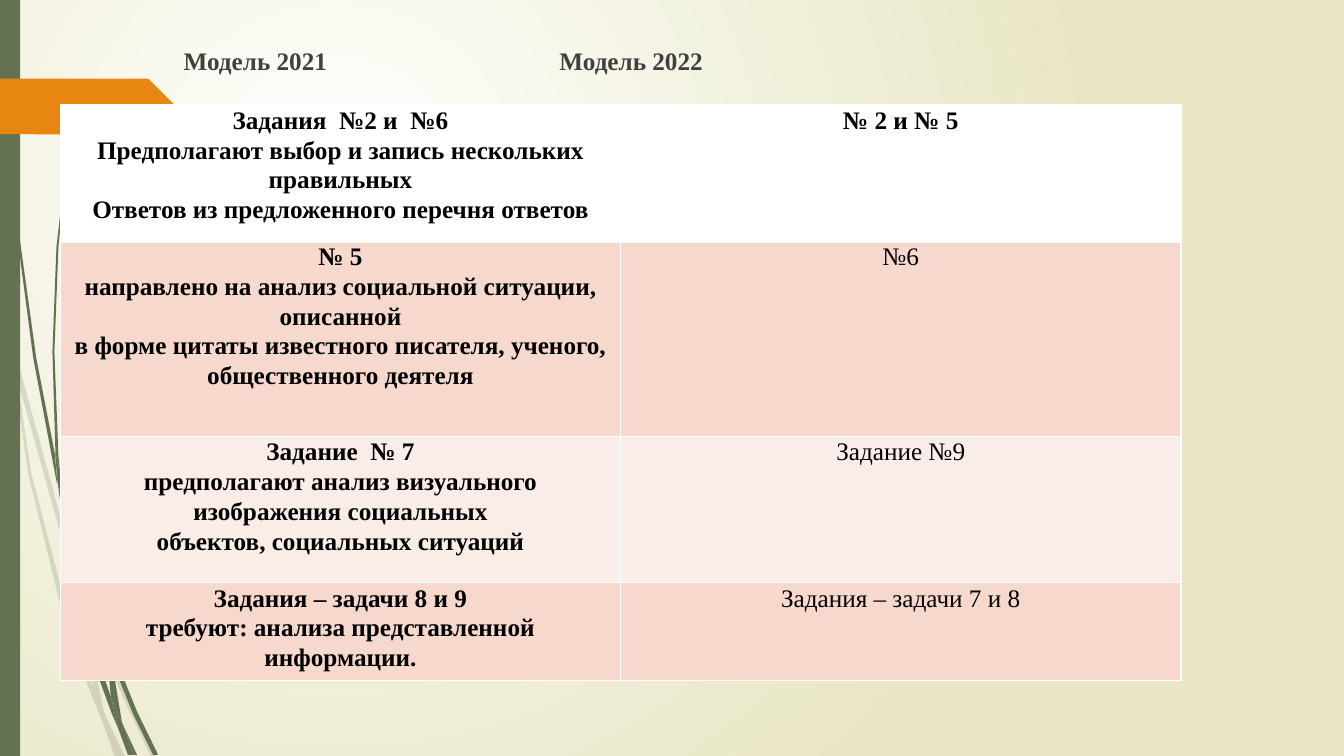
from lxml import etree
from pptx import Presentation
from pptx.dml.color import RGBColor
from pptx.enum.shapes import MSO_SHAPE as SHAPE
from pptx.enum.text import PP_ALIGN as ALIGN
from pptx.oxml.ns import qn
from pptx.util import Cm, Pt

GREEN = RGBColor(0x64, 0x72, 0x52)
ORANGE = RGBColor(0xE7, 0x87, 0x12)
WHITE = RGBColor(0xFF, 0xFF, 0xFF)
CREAM = RGBColor(0xE8, 0xE6, 0xC4)
PEACH = RGBColor(0xF6, 0xD9, 0xCC)
PALE = RGBColor(0xFA, 0xED, 0xE7)
BLACK = RGBColor(0, 0, 0)
GREY = RGBColor(0x40, 0x40, 0x40)
FONT, SIZE = "Times New Roman", Pt(18)

# Content
HEADINGS = ["Модель 2021", "Модель 2022"]
HEADING_TABS = [2.86, 12.33]
# row height, fill, right cell bold, left paragraphs, right text
ROWS = [
    (3.43, WHITE, True,
     ["Задания  №2 и  №6",
      "Предполагают выбор и запись нескольких правильных",
      "Ответов из предложенного перечня ответов"], "№ 2 и № 5"),
    (4.93, PEACH, False,
     ["№ 5",
      "направлено на анализ социальной ситуации, описанной",
      "в форме цитаты известного писателя, ученого, общественного деятеля"],
     "№6"),
    (3.68, PALE, False,
     ["Задание  № 7",
      "предполагают анализ визуального изображения социальных",
      "объектов, социальных ситуаций"], "Задание №9"),
    (2.46, PEACH, False,
     ["Задания – задачи 8 и 9",
      "требуют: анализа представленной информации."],
     "Задания – задачи 7 и 8"),
]
COL_W = 14.12

# Outlines of the grass blades, in units of 0.0254 cm
UNIT = Cm(0.0254)
PALE_BLADES = [
    [(11, 350), (9, 322), (0, 282), (0, 299), (10, 344)],
    [(58, 522), (84, 599), (85, 586), (62, 520), (14, 345), (17, 376)],
    [(92, 607), (88, 596), (88, 610), (123, 694), (150, 751), (155, 751),
     (127, 692)],
    [(119, 751), (124, 751), (105, 711)],
    [(93, 683), (70, 619), (31, 469), (17, 376), (11, 350), (28, 470),
     (65, 621), (92, 693), (101, 714), (99, 707)],
    [(84, 599), (87, 646), (93, 683), (96, 692), (105, 711), (103, 706),
     (91, 646), (88, 610), (88, 608)],
    [(88, 584), (110, 462), (160, 349), (229, 245), (268, 198), (290, 175),
     (312, 154), (312, 153), (289, 175), (268, 197), (228, 244), (158, 348),
     (107, 461), (85, 584), (85, 586), (88, 596)],
    [(101, 714), (114, 751), (119, 751)],
    [(88, 608), (88, 610), (88, 596), (85, 586), (84, 599)],
    [(96, 692), (93, 683), (99, 707), (101, 714), (119, 751), (105, 711)],
]
DARK_BLADES = [
    [(7, 110), (17, 233), (33, 355), (56, 477), (57, 481), (55, 457),
     (55, 453), (36, 355), (19, 232), (8, 109), (5, 48), (4, 0), (3, 0),
     (4, 48)],
    [(88, 592), (106, 645), (106, 631), (93, 590), (60, 472), (64, 505)],
    [(113, 649), (110, 641), (111, 656), (132, 708), (152, 749), (157, 749),
     (136, 706)],
    [(110, 691), (98, 657), (72, 556), (64, 505), (57, 477), (68, 557),
     (93, 659), (111, 708), (117, 722), (116, 717)],
    [(60, 472), (58, 453), (54, 349), (58, 245), (63, 193), (70, 141),
     (62, 193), (56, 245), (52, 349), (55, 449)],
    [(133, 749), (136, 749), (122, 719)],
    [(57, 477), (64, 505), (60, 472), (55, 449), (55, 453)],
    [(111, 633), (125, 552), (158, 476), (205, 406), (231, 374), (245, 359),
     (261, 344), (260, 344), (245, 358), (231, 373), (204, 405), (156, 474),
     (122, 551), (106, 631), (110, 641)],
    [(117, 722), (127, 749), (131, 749)],
    [(106, 645), (110, 691), (116, 706), (122, 719), (121, 716), (111, 656),
     (109, 651)],
    [(106, 645), (109, 651), (111, 656), (110, 641), (106, 631)],
    [(116, 706), (110, 691), (116, 717), (117, 722), (130, 749), (133, 749),
     (122, 719)],
]
ARROW = [(173, 108), (148, 133), (146, 134), (136, 134), (0, 133), (0, 78),
         (146, 78), (148, 79), (173, 104), (174, 106)]


def paint(shape, color, opacity=100):
    shape.shadow.inherit = False
    shape.fill.solid()
    shape.fill.fore_color.rgb = color
    shape.line.fill.background()
    if opacity < 100:
        rgb = shape.element.spPr.find(qn("a:solidFill"))[0]
        etree.SubElement(rgb, qn("a:alpha"), val=str(opacity * 1000))


def outline(s, points, color, opacity=100):
    builder = s.shapes.build_freeform(*points[0], scale=UNIT)
    builder.add_line_segments(points[1:], close=True)
    paint(builder.convert_to_shape(), color, opacity)


def style_runs(p, color, bold):
    for r in p.runs:
        r.font.name, r.font.size, r.font.bold = FONT, SIZE, bold
        r.font.color.rgb = color


def add_borders(cell, bottom):
    tcPr = cell._tc.get_or_add_tcPr()
    for i, (side, width) in enumerate(
            [("L", 1), ("R", 1), ("T", 1), ("B", bottom)]):
        ln = etree.Element(qn("a:ln" + side), w=str(Pt(width)))
        fill = etree.SubElement(ln, qn("a:solidFill"))
        etree.SubElement(fill, qn("a:srgbClr"), val=str(WHITE))
        tcPr.insert(i, ln)


def fill_cell(cell, lines, fill, bold, bottom):
    cell.margin_left = cell.margin_right = Cm(0.17)
    cell.margin_top = cell.margin_bottom = 0
    cell.fill.solid()
    cell.fill.fore_color.rgb = fill
    add_borders(cell, bottom)
    cell.text_frame.text = "\n".join(lines)
    for p in cell.text_frame.paragraphs:
        p.alignment, p.line_spacing = ALIGN.CENTER, 1.07
        style_runs(p, BLACK, bold)


def add_background(s):
    fill = s.background.fill
    fill.gradient()
    for stop, color in zip(fill.gradient_stops, (WHITE, CREAM)):
        stop.color.rgb = color
    grad = s.element.find(".//" + qn("a:gradFill"))
    grad.remove(grad.find(qn("a:lin")))
    circle = etree.Element(qn("a:path"), {"path": "circle"})
    etree.SubElement(circle, qn("a:fillToRect"),
                     l="50000", t="50000", r="100000", b="100000")
    grad.find(qn("a:gsLst")).addnext(circle)


def add_headings(s):
    tf = s.shapes.add_textbox(Cm(1.52), Cm(1.02), Cm(30.02),
                              Cm(16.15)).text_frame
    tf.word_wrap = True
    p = tf.paragraphs[0]
    p.text = "".join("\t" + h for h in HEADINGS)
    p.space_before = Pt(10)
    style_runs(p, GREY, True)
    tabs = etree.SubElement(p._p.get_or_add_pPr(), qn("a:tabLst"))
    for pos in HEADING_TABS:
        etree.SubElement(tabs, qn("a:tab"), pos=str(Cm(pos)), algn="l")


def add_comparison(s):
    height = sum(row[0] for row in ROWS)
    table = s.shapes.add_table(len(ROWS), 2, Cm(1.52), Cm(2.64),
                               Cm(2 * COL_W), Cm(height)).table
    table.first_row = table.horz_banding = False
    for col in table.columns:
        col.width = Cm(COL_W)
    for i, (h, fill, right_bold, left, right) in enumerate(ROWS):
        table.rows[i].height = Cm(h)
        bottom = 3 if i == 0 else 1
        fill_cell(table.cell(i, 0), left, fill, True, bottom)
        fill_cell(table.cell(i, 1), [right], fill, right_bold, bottom)


def main():
    prs = Presentation()
    prs.slide_width, prs.slide_height = Cm(33.87), Cm(19.05)
    s = prs.slides.add_slide(prs.slide_layouts[6])
    add_background(s)
    # Grass, side bar and arrow
    for blades, opacity in ((PALE_BLADES, 20), (DARK_BLADES, 100)):
        for points in blades:
            outline(s, points, GREEN, opacity)
    bar = s.shapes.add_shape(SHAPE.RECTANGLE, 0, 0, Cm(0.51), Cm(19.05))
    paint(bar, GREEN)
    outline(s, ARROW, ORANGE)
    # Text and table
    add_headings(s)
    add_comparison(s)
    prs.save("out.pptx")


if __name__ == "__main__":
    main()
